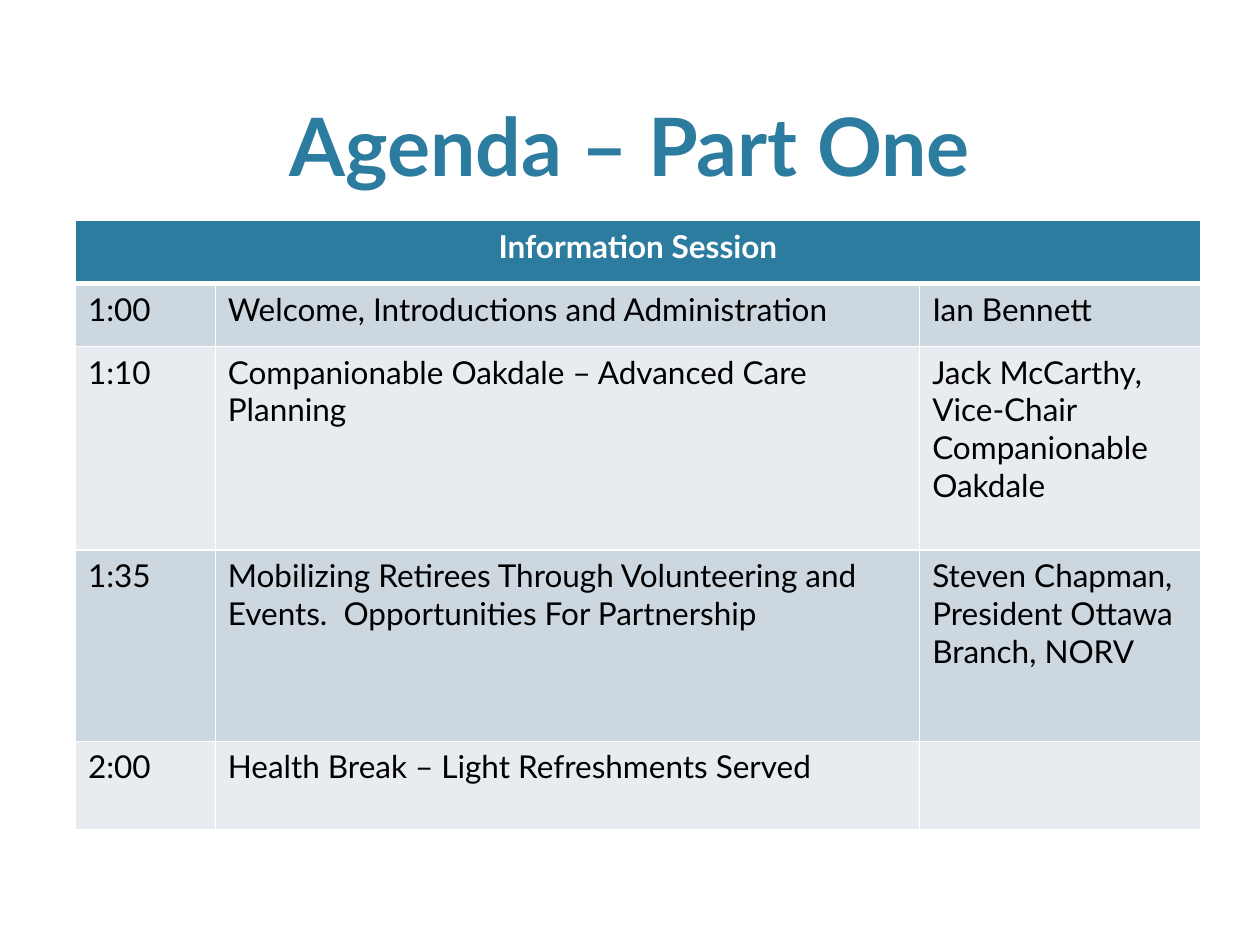
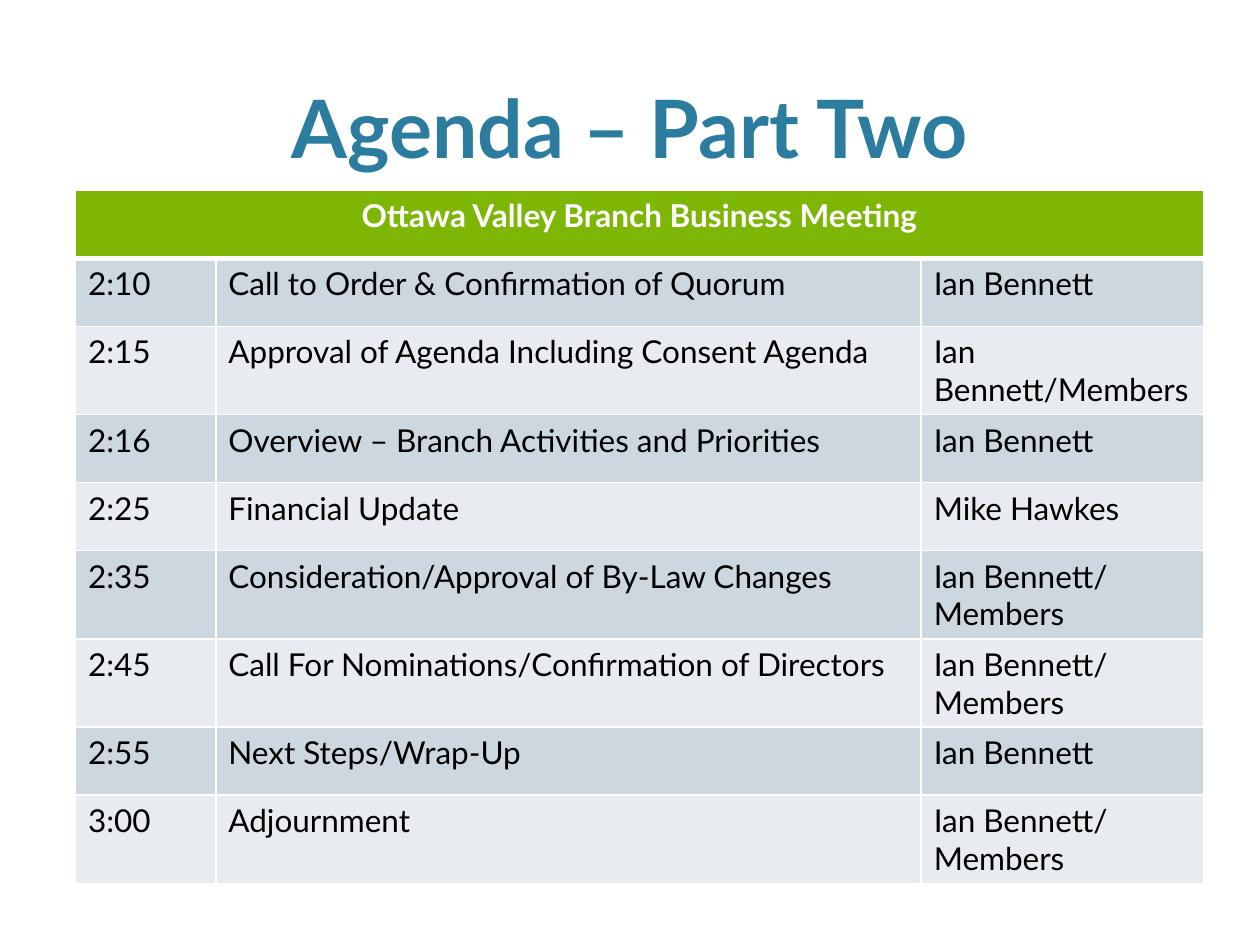
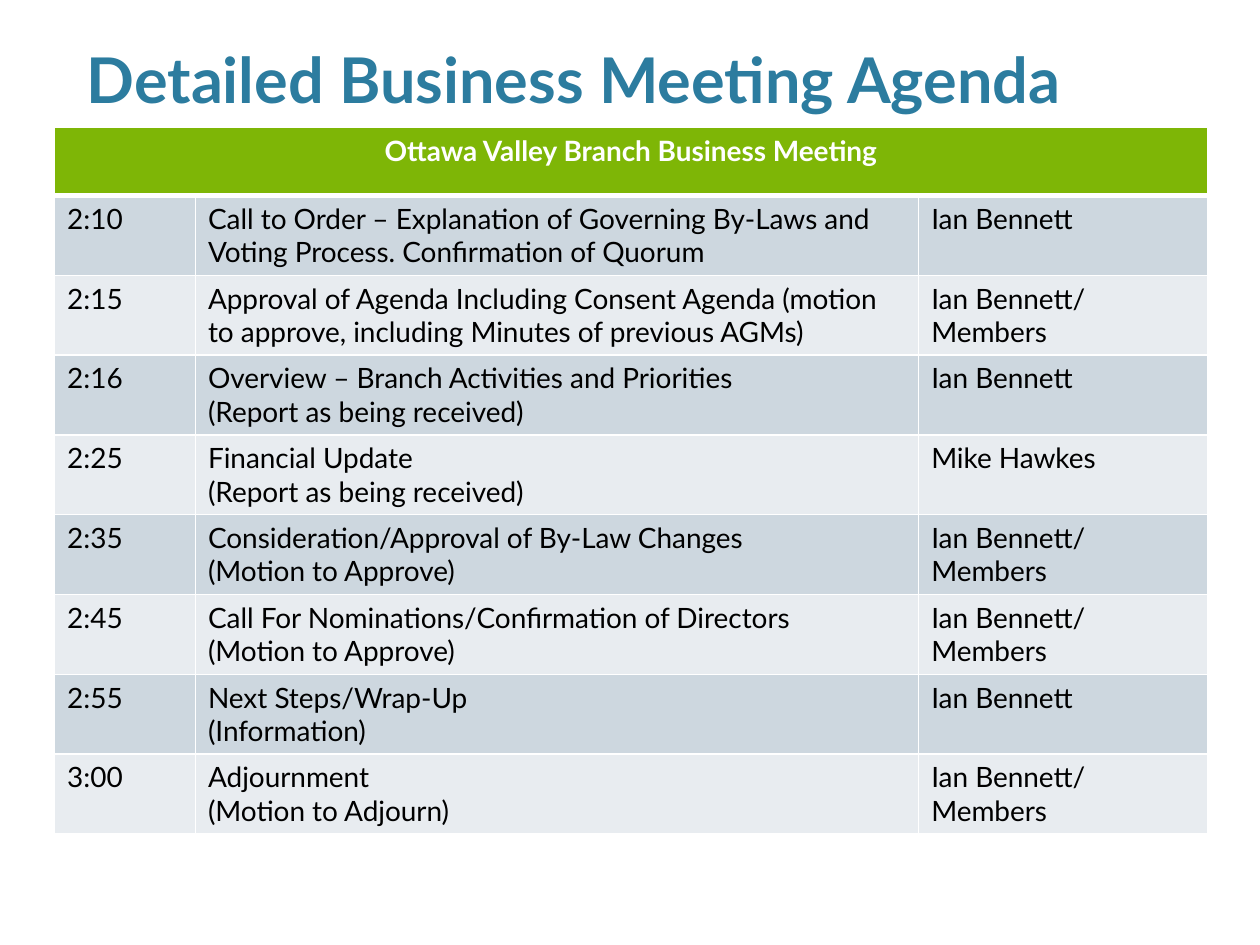
from dataclasses import dataclass
from typing import Any

from lxml.etree import SubElement
from pptx import Presentation
from pptx.dml.color import RGBColor
from pptx.enum.text import MSO_ANCHOR, PP_ALIGN
from pptx.oxml.ns import qn
from pptx.util import Cm, Pt

# Shared look
FONT = "Lato"
BLUE, GREEN = "2C7C9F", "7EB606"
WHITE, BLACK = "FFFFFF", "000000"
BANDS = ("CDD7DF", "E8ECF0")
THIN, THICK = 1, 3

Row = tuple[str, str, str]


@dataclass
class Title:
    text: str
    box: tuple[float, float, float, float]
    size: int = 46
    align: Any = PP_ALIGN.CENTER
    anchor: Any = MSO_ANCHOR.BOTTOM


@dataclass
class Agenda:
    head: str
    fill: str
    left: float
    top: float
    cols: tuple[float, ...]
    heights: list[float]
    rows: list[Row]
    size: int = 18


def shade(code: str) -> RGBColor:
    return RGBColor.from_string(code)


def style(frame: Any, size: int, code: str, bold: bool, align: Any) -> None:
    form = {"name": FONT, "size": Pt(size), "bold": bold}
    for para in frame.paragraphs:
        para.alignment = align
        for run in para.runs:
            for key, value in form.items():
                setattr(run.font, key, value)
            run.font.color.rgb = shade(code)


def border(cell: Any, top: int, base: int) -> None:
    props = cell._tc.get_or_add_tcPr()
    widths = {"a:lnL": THIN, "a:lnR": THIN, "a:lnT": top, "a:lnB": base}
    for tag, width in widths.items():
        line = SubElement(props, qn(tag), w=str(Pt(width)))
        fill = SubElement(line, qn("a:solidFill"))
        SubElement(fill, qn("a:srgbClr"), val=WHITE)


def draw_title(slide: Any, title: Title) -> None:
    frame = slide.shapes.add_textbox(*map(Cm, title.box)).text_frame
    frame.word_wrap = True
    frame.vertical_anchor = title.anchor
    frame.text = title.text
    style(frame, title.size, BLUE, True, title.align)


def draw_table(slide: Any, plan: Agenda) -> None:
    rows = [(plan.head, "", ""), *plan.rows]
    table = slide.shapes.add_table(
        len(rows), len(plan.cols), Cm(plan.left), Cm(plan.top),
        Cm(sum(plan.cols)), Cm(sum(plan.heights))).table
    for col, width in zip(table.columns, plan.cols):
        col.width = Cm(width)
    for r, (row, height) in enumerate(zip(rows, plan.heights)):
        table.rows[r].height = Cm(height)
        top = r == 0
        for c, text in enumerate(row):
            cell = table.cell(r, c)
            border(cell, THICK if r == 1 else THIN, THICK if top else THIN)
            cell.fill.solid()
            cell.fill.fore_color.rgb = shade(
                plan.fill if top else BANDS[(r - 1) % 2])
            cell.text = text
            style(cell.text_frame, plan.size, WHITE if top else BLACK, top,
                  PP_ALIGN.CENTER if top else PP_ALIGN.LEFT)
    table.cell(0, 0).merge(table.cell(0, len(plan.cols) - 1))


# Wording shared by the two business meeting tables
MEETING = "Ottawa Valley Branch Business Meeting"
CHAIR = "Ian Bennett"
ALL = "Ian Bennett/ Members"
MONEY = "Mike Hawkes"
REVIEW = "Overview – Branch Activities and Priorities"
LAWS = "Consideration/Approval of By-Law Changes"
VOTE = "Call For Nominations/Confirmation of Directors"
REPORT = "\n(Report as being received)"
MOTION = "\n(Motion to Approve)"
LOW, TALL = 1.37, 1.78

# Slides
PAGES = [
    (
        Title("Agenda – Part One", (1.52, 0.3, 22.35, 3.71)),
        Agenda(
            "Information Session", BLUE, 1.52, 4.45, (2.82, 14.2, 5.66),
            [1.27, 1.27, 4.1, 3.86, TALL],
            [
                ("1:00", "Welcome, Introductions and Administration", CHAIR),
                ("1:10", "Companionable Oakdale – Advanced Care Planning",
                 "Jack McCarthy, Vice-Chair Companionable Oakdale"),
                ("1:35", "Mobilizing Retirees Through Volunteering and "
                 "Events.  Opportunities For Partnership",
                 "Steven Chapman, President Ottawa Branch, NORV"),
                ("2:00", "Health Break – Light Refreshments Served", ""),
            ]),
    ),
    (
        Title("Agenda – Part Two", (1.52, 0.3, 22.35, 3.35)),
        Agenda(
            MEETING, GREEN, 1.52, 3.84, (2.83, 14.22, 5.69),
            [LOW, LOW, TALL, LOW, LOW, TALL, TALL, LOW, TALL],
            [
                ("2:10", "Call to Order & Confirmation of Quorum", CHAIR),
                ("2:15", "Approval of Agenda Including Consent Agenda",
                 "Ian Bennett/Members"),
                ("2:16", REVIEW, CHAIR),
                ("2:25", "Financial Update", MONEY),
                ("2:35", LAWS, ALL),
                ("2:45", VOTE, ALL),
                ("2:55", "Next Steps/Wrap-Up", CHAIR),
                ("3:00", "Adjournment", ALL),
            ]),
    ),
    (
        Title("Detailed Business Meeting Agenda", (1.5, 0.69, 23.22, 1.8),
              36, PP_ALIGN.LEFT, MSO_ANCHOR.TOP),
        Agenda(
            MEETING, GREEN, 1.1, 2.57, (2.84, 14.58, 5.82),
            [LOW] + [1.6] * 8,
            [
                ("2:10", "Call to Order – Explanation of Governing By-Laws "
                 "and Voting Process. Confirmation of Quorum", CHAIR),
                ("2:15", "Approval of Agenda Including Consent Agenda (motion "
                 "to approve, including Minutes of previous AGMs)", ALL),
                ("2:16", REVIEW + REPORT, CHAIR),
                ("2:25", "Financial Update" + REPORT, MONEY),
                ("2:35", LAWS + MOTION, ALL),
                ("2:45", VOTE + MOTION, ALL),
                ("2:55", "Next Steps/Wrap-Up\n(Information)", CHAIR),
                ("3:00", "Adjournment\n(Motion to Adjourn)", ALL),
            ],
            16),
    ),
]


def main() -> None:
    deck = Presentation()
    deck.slide_width, deck.slide_height = Cm(25.4), Cm(19.05)
    for title, plan in PAGES:
        slide = deck.slides.add_slide(deck.slide_layouts[6])
        draw_title(slide, title)
        draw_table(slide, plan)
    deck.save("out.pptx")


if __name__ == "__main__":
    main()
